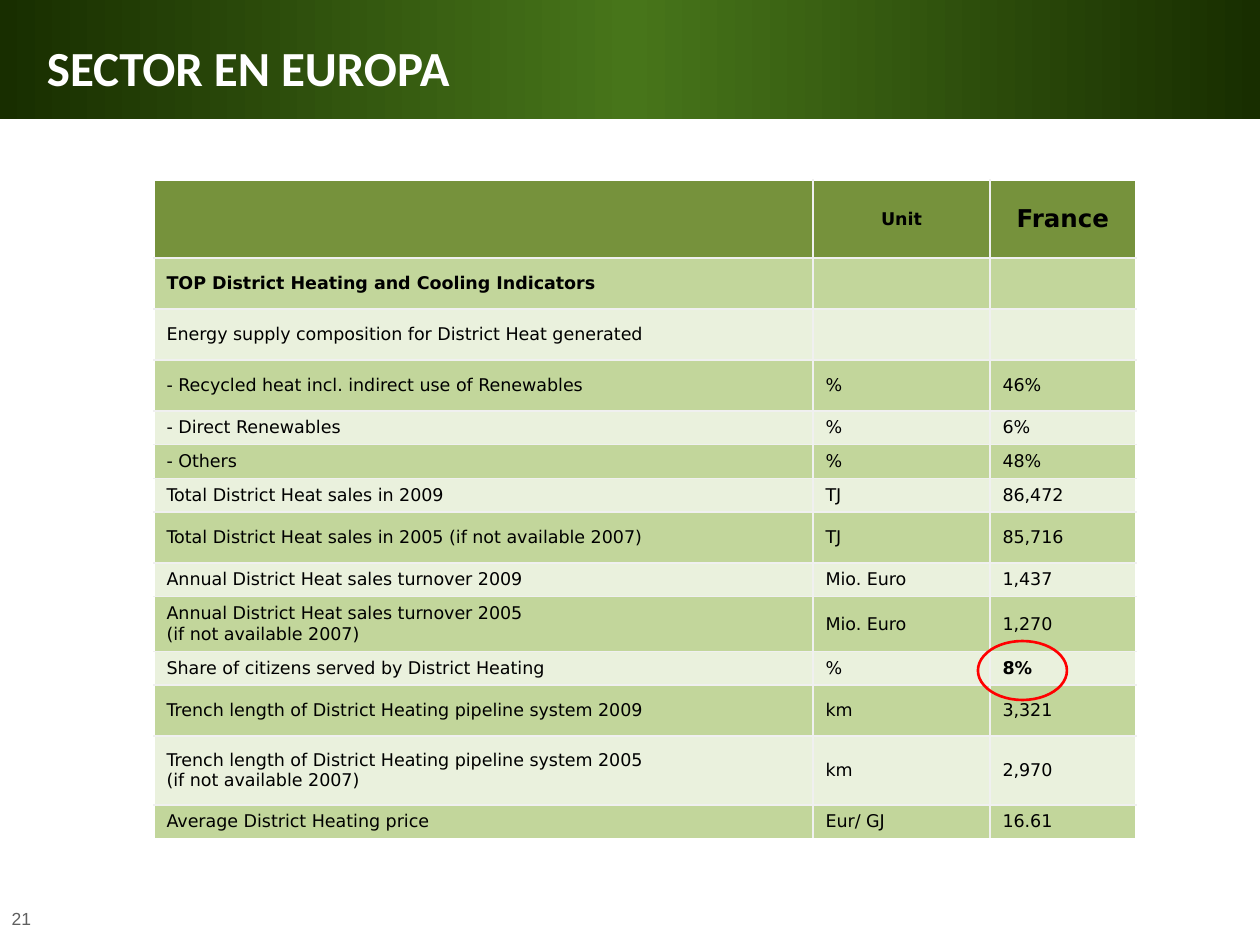
from copy import deepcopy
from dataclasses import dataclass

from lxml.etree import SubElement
from pptx import Presentation
from pptx.dml.color import RGBColor
from pptx.enum.shapes import MSO_SHAPE as SHAPE
from pptx.enum.text import MSO_ANCHOR as ANCHOR, PP_ALIGN as ALIGN
from pptx.oxml.ns import qn
from pptx.util import Emu, Pt

PX_PER_INCH = 126


@dataclass(frozen=True)
class Theme:
    edge: str = "182E00"
    glow: str = "47751A"
    header: str = "76923C"
    band: str = "C2D69B"
    pale: str = "EAF1DD"
    grid: str = "F0F0F0"
    white: str = "FFFFFF"
    black: str = "000000"
    grey: str = "5F5F5F"
    red: str = "FF0000"
    title_font: str = "Calibri"
    table_font: str = "DejaVu Sans"
    number_font: str = "Arial"
    title_size: int = 28
    country_size: int = 14
    body_size: int = 10


def px(n):
    return Emu(round(n * 914400 / PX_PER_INCH))


def rgb(color):
    return RGBColor.from_string(color)


def write(tf, text, *, font, size, color, bold=False, align=ALIGN.LEFT):
    p = tf.paragraphs[0]
    p.alignment = align
    for i, line in enumerate(text.split("\n")):
        if i:
            p.add_line_break()
        r = p.add_run()
        r.text = line
        r.font.name, r.font.size, r.font.bold = font, Pt(size), bold
        r.font.color.rgb = rgb(color)


class Deck:
    def __init__(self, theme):
        self.theme = theme
        self.prs = Presentation()
        self.prs.slide_width, self.prs.slide_height = px(1260), px(945)
        self.s = self.prs.slides.add_slide(self.prs.slide_layouts[6])

    def shape(self, kind, *box):
        sp = self.s.shapes.add_shape(kind, *map(px, box))
        sp.shadow.inherit = False
        return sp

    def banner(self, *box):
        t = self.theme
        sp = self.shape(SHAPE.RECTANGLE, *box)
        sp.line.fill.background()
        sp.fill.gradient()
        sp.fill.gradient_angle = 0
        stops = next(sp._element.iter(qn("a:gsLst")))
        stops.append(deepcopy(stops[0]))
        colors = (t.edge, t.glow, t.edge)
        for i, (stop, color) in enumerate(zip(sp.fill.gradient_stops, colors)):
            stop.position = i / 2
            stop.color.rgb = rgb(color)

    def ring(self, *box):
        sp = self.shape(SHAPE.OVAL, *box)
        sp.fill.background()
        sp.line.color.rgb = rgb(self.theme.red)
        sp.line.width = Pt(1.5)

    def text(self, text, *box, inset=13, anchor=ANCHOR.TOP, **style):
        tf = self.s.shapes.add_textbox(*map(px, box)).text_frame
        tf.word_wrap = True
        tf.vertical_anchor = anchor
        tf.margin_left = px(inset)
        write(tf, text, **style)

    def borders(self, cell, outer):
        tc_pr = cell._tc.get_or_add_tcPr()
        for side, is_outer in zip("LRTB", outer):
            ln = SubElement(tc_pr, qn(f"a:ln{side}"), w=str(Pt(1)))
            fill = SubElement(ln, qn("a:solidFill"))
            color = self.theme.white if is_outer else self.theme.grid
            SubElement(fill, qn("a:srgbClr"), val=color)

    def table(self, x, y, widths, heights, rows):
        t = self.theme
        frame = self.s.shapes.add_table(
            len(rows), len(widths), px(x), px(y), px(sum(widths)), px(sum(heights)))
        table = frame.table
        table.first_row = table.horz_banding = False
        for col, width in zip(table.columns, widths):
            col.width = px(width)
        for i, (values, height) in enumerate(zip(rows, heights)):
            table.rows[i].height = px(height)
            fill = t.header if i == 0 else t.band if i % 2 else t.pale
            for j, value in enumerate(values):
                cell = table.cell(i, j)
                outer = (j == 0, j == len(widths) - 1, i == 0, i == len(rows) - 1)
                self.borders(cell, outer)
                cell.fill.solid()
                cell.fill.fore_color.rgb = rgb(fill)
                cell.vertical_anchor = ANCHOR.MIDDLE
                if value:
                    write(cell.text_frame, value, font=t.table_font, color=t.black,
                          size=t.country_size if value == "France" else t.body_size,
                          bold=i < 2 or value == "8%",
                          align=ALIGN.LEFT if i else ALIGN.CENTER)


ROWS = [
    ("", "Unit", "France"),
    ("TOP District Heating and Cooling Indicators", "", ""),
    ("Energy supply composition for District Heat generated", "", ""),
    ("- Recycled heat incl. indirect use of Renewables", "%", "46%"),
    ("- Direct Renewables", "%", "6%"),
    ("- Others", "%", "48%"),
    ("Total District Heat sales in 2009", "TJ", "86,472"),
    ("Total District Heat sales in 2005 (if not available 2007)", "TJ", "85,716"),
    ("Annual District Heat sales turnover 2009", "Mio. Euro", "1,437"),
    ("Annual District Heat sales turnover 2005 \n(if not available 2007)",
     "Mio. Euro", "1,270"),
    ("Share of citizens served by District Heating", "%", "8%"),
    ("Trench length of District Heating pipeline system 2009", "km", "3,321"),
    ("Trench length of District Heating pipeline system 2005 \n(if not available 2007)",
     "km", "2,970"),
    ("Average District Heating price", "Eur/ GJ", "16.61"),
]
COLUMN_WIDTHS = (659, 177, 146)
ROW_HEIGHTS = (78, 51, 51, 51, 33, 33, 33, 51, 33, 54, 33, 51, 69, 33)


def main():
    t = Theme()
    deck = Deck(t)
    deck.banner(0, 0, 1260, 119)
    deck.text("21", -8, 902, 58, 40, font=t.number_font, size=t.body_size,
              color=t.grey, align=ALIGN.CENTER)
    deck.text("SECTOR EN EUROPA", 19, 26, 1071, 82, inset=28, anchor=ANCHOR.MIDDLE,
              font=t.title_font, size=t.title_size, color=t.white, bold=True)
    deck.table(154, 180, COLUMN_WIDTHS, ROW_HEIGHTS, ROWS)
    deck.ring(978, 641, 89, 59)
    deck.prs.save("out.pptx")


if __name__ == "__main__":
    main()
